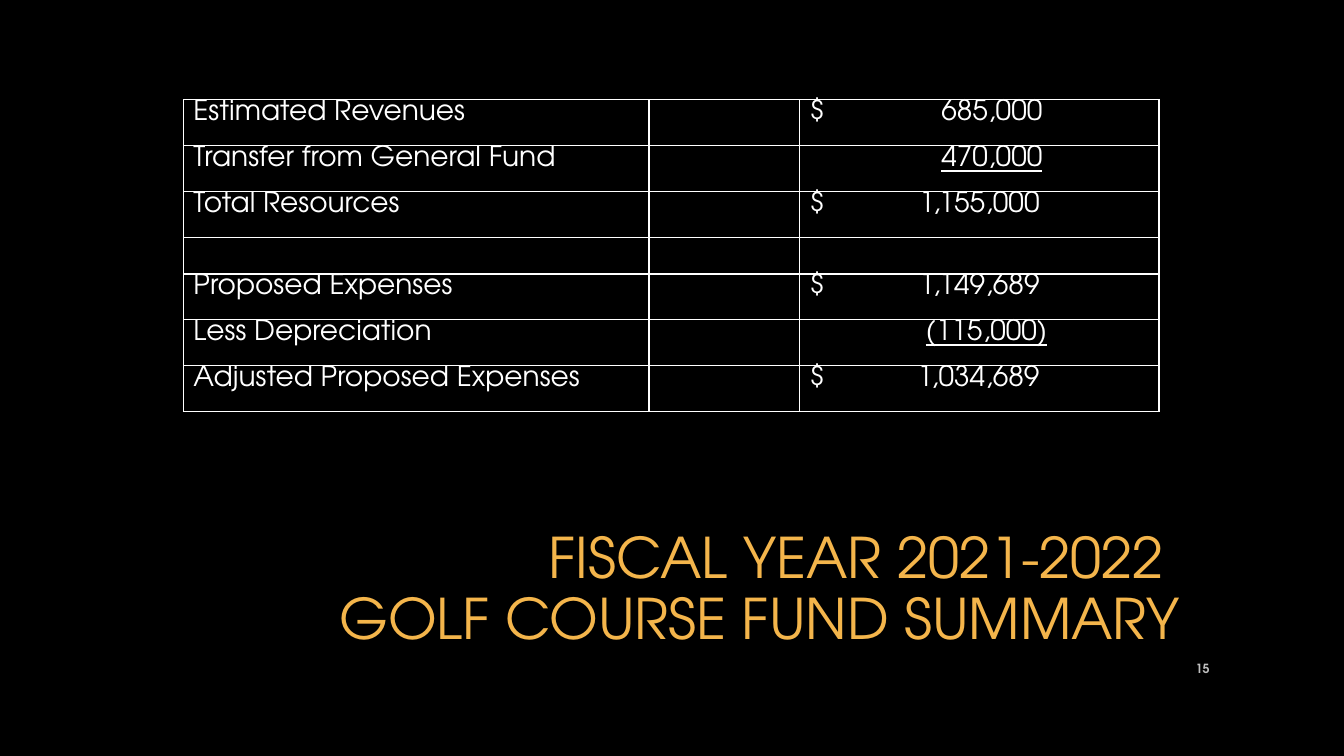
"""Build the golf course fund summary slide."""
from typing import NamedTuple

from lxml.etree import SubElement
from pptx import Presentation
from pptx.dml.color import RGBColor
from pptx.enum.text import MSO_ANCHOR, PP_ALIGN
from pptx.oxml.ns import qn
from pptx.util import Pt

FONT = "TeX Gyre Adventor"
BLACK = RGBColor(0x00, 0x00, 0x00)
WHITE = RGBColor(0xFF, 0xFF, 0xFF)
GOLD = RGBColor(0xF4, 0xB5, 0x4B)
GREY = RGBColor(0xBF, 0xBF, 0xBF)
COLUMN_WIDTHS = (332.64, 107.28, 257.04)
ROW_HEIGHT = 32.8
GAP_HEIGHT = 26


class FundLine(NamedTuple):
    """One row of the summary; an empty label makes a gap."""
    label: str = ""
    amount: str = ""
    amount_end: float = 164.5
    underlined: bool = False


LINES = (
    FundLine("Estimated Revenues", "$\t685,000", 166.5),
    FundLine("Transfer from General Fund", "\t470,000", 166.5, True),
    FundLine("Total Resources", "$\t1,155,000"),
    FundLine(),
    FundLine("Proposed Expenses", "$\t1,149,689"),
    FundLine("Less Depreciation", "\t(115,000)", 170, True),
    FundLine("Adjusted Proposed Expenses", "$\t1,034,689"),
)


def add_run(p, text: str, size: float, color: RGBColor,
            bold: bool = False, underline: bool = False) -> None:
    """Append a formatted run to a paragraph."""
    r = p.add_run()
    r.text = text
    r.font.name = FONT
    r.font.size = Pt(size)
    r.font.color.rgb = color
    r.font.bold = bold
    r.font.underline = underline


def add_right_tab(p, position: float) -> None:
    """Give a paragraph one right-aligned tab stop."""
    tabs = SubElement(p._p.get_or_add_pPr(), qn("a:tabLst"))
    SubElement(tabs, qn("a:tab"), pos=str(Pt(position)), algn="r")


def add_summary(slide) -> None:
    """Draw the fund table."""
    table = slide.shapes.add_table(
        len(LINES), len(COLUMN_WIDTHS), Pt(131), Pt(71.3),
        Pt(sum(COLUMN_WIDTHS)), Pt(ROW_HEIGHT * len(LINES))).table
    table.first_row = table.horz_banding = False
    for column, width in zip(table.columns, COLUMN_WIDTHS):
        column.width = Pt(width)
    for row, line in zip(table.rows, LINES):
        row.height = Pt(ROW_HEIGHT if line.label else GAP_HEIGHT)
        for cell in row.cells:
            cell.fill.solid()
            cell.fill.fore_color.rgb = BLACK
            cell.margin_top = cell.margin_bottom = Pt(0)
            cell.text_frame.paragraphs[0].font.size = Pt(18)
        if line.label:
            label, _, amount = (c.text_frame.paragraphs[0] for c in row.cells)
            add_run(label, line.label, 20, WHITE)
            add_right_tab(amount, line.amount_end)
            add_run(amount, line.amount, 20, WHITE, underline=line.underlined)


def add_title(slide) -> None:
    """Place and fill the title."""
    sp = slide.shapes.title
    sp.left, sp.top, sp.width, sp.height = Pt(165.6), Pt(352.8), Pt(684), Pt(116)
    tf = sp.text_frame
    tf.word_wrap = True
    tf.vertical_anchor = MSO_ANCHOR.BOTTOM
    p = tf.paragraphs[0]
    p.alignment = PP_ALIGN.RIGHT
    p.line_spacing = 0.9
    add_run(p, "FISCAL YEAR 2021-2022 ", 40, GOLD)
    p.add_line_break()
    add_run(p, "GOLF COURSE FUND SUMMARY", 40, GOLD)


def add_page_number(slide) -> None:
    """Draw the page number."""
    tf = slide.shapes.add_textbox(Pt(828), Pt(463), Pt(43.2), Pt(28.8)).text_frame
    tf.word_wrap = True
    tf.vertical_anchor = MSO_ANCHOR.MIDDLE
    p = tf.paragraphs[0]
    p.alignment = PP_ALIGN.RIGHT
    add_run(p, "15", 9, GREY, bold=True)


def main() -> None:
    """Build and save the slide."""
    prs = Presentation()
    prs.slide_width, prs.slide_height = Pt(960), Pt(540)
    slide = prs.slides.add_slide(prs.slide_layouts[5])
    slide.background.fill.solid()
    slide.background.fill.fore_color.rgb = BLACK
    add_title(slide)
    add_page_number(slide)
    add_summary(slide)
    prs.save("out.pptx")


if __name__ == "__main__":
    main()
